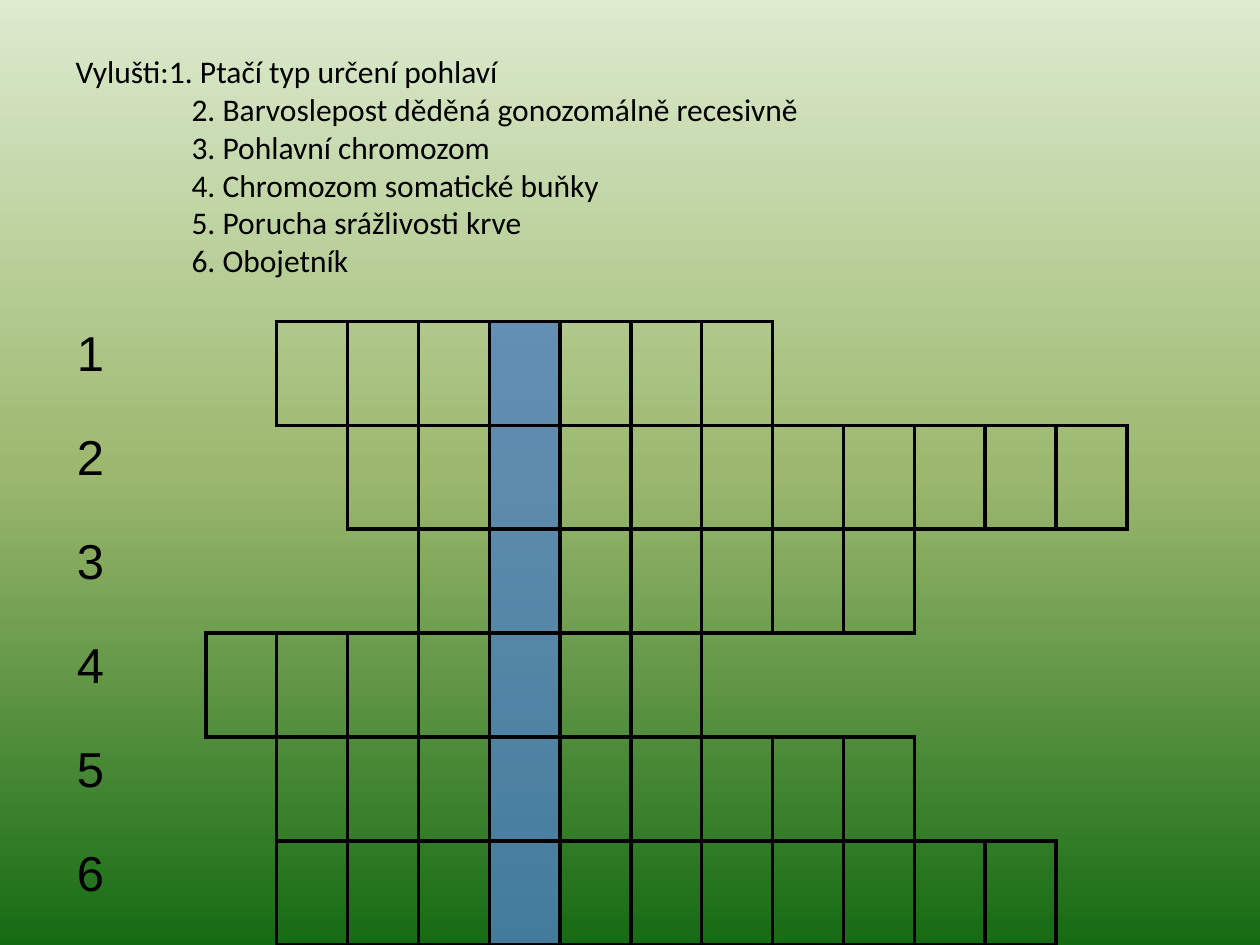
from copy import deepcopy

from lxml.etree import SubElement
from pptx import Presentation
from pptx.dml.color import RGBColor
from pptx.enum.text import MSO_ANCHOR, MSO_AUTO_SIZE, PP_ALIGN
from pptx.oxml.ns import qn
from pptx.util import Inches, Pt

BLACK = "000000"
KEY_FILL = "4F81BD"
SKY_TO_GRASS = ((0, "DDEBCF"), (0.5, "9CB86E"), (1, "156B13"))
CLUES = (
    "Vylušti:1. Ptačí typ určení pohlaví",
    "2. Barvoslepost děděná gonozomálně recesivně",
    "3. Pohlavní chromozom",
    "4. Chromozom somatické buňky",
    "5. Porucha srážlivosti krve",
    "6. Obojetník",
)
WORD_SPANS = ((3, 9), (4, 14), (5, 11), (2, 8), (3, 11), (3, 13))
COLUMNS = 16
KEY_COLUMN = 6
SIDES = (("lnL", 0, -1), ("lnR", 0, 1), ("lnT", -1, 0), ("lnB", 1, 0))


def color(hex_code):
    """Turn a hex string into a colour."""
    return RGBColor.from_string(hex_code)


def style_runs(paragraph, font_name, size):
    """Give every run of a paragraph its font, size and black colour."""
    for run in paragraph.runs:
        run.font.name = font_name
        run.font.size = Pt(size)
        run.font.color.rgb = color(BLACK)


def paint_background(slide):
    """Fill the background with a vertical three-stop gradient."""
    fill = slide.background.fill
    fill.gradient()
    fill.gradient_angle = 270
    stop_list = slide.element.find(".//" + qn("a:gsLst"))
    stop_list.append(deepcopy(stop_list[-1]))
    for stop, (position, hex_code) in zip(fill.gradient_stops, SKY_TO_GRASS):
        stop.position = position
        stop.color.rgb = color(hex_code)


def place_clues(slide, left, top, width, height):
    """Set the clues in the title with a hanging indent."""
    title = slide.shapes.title
    title.left, title.top, title.width, title.height = left, top, width, height
    frame = title.text_frame
    frame.word_wrap = True
    frame.auto_size = MSO_AUTO_SIZE.NONE
    frame.vertical_anchor = MSO_ANCHOR.MIDDLE
    paragraph = frame.paragraphs[0]
    paragraph.text = "\v".join(CLUES)
    paragraph.alignment = PP_ALIGN.LEFT
    properties = paragraph._p.get_or_add_pPr()
    properties.set("marL", str(Inches(0.92)))
    properties.set("indent", str(-Inches(0.92)))
    style_runs(paragraph, "Calibri", 18)


def in_word(row, column):
    """Tell whether a grid position holds a letter."""
    if not 0 <= row < len(WORD_SPANS):
        return False
    first, last = WORD_SPANS[row]
    return first <= column <= last


def draw_borders(cell, row, column):
    """Rule each side of a cell that touches a letter square."""
    properties = cell._tc.get_or_add_tcPr()
    for index, (tag, down, across) in enumerate(SIDES):
        line = SubElement(properties, qn("a:" + tag), w=str(Pt(2.25)))
        properties.insert(index, line)
        if in_word(row, column) or in_word(row + down, column + across):
            fill = SubElement(line, qn("a:solidFill"))
            SubElement(fill, qn("a:srgbClr"), val=BLACK)
        else:
            SubElement(line, qn("a:noFill"))


def fill_cell(cell, is_key):
    """Tint a key square and leave any other cell clear."""
    if not is_key:
        cell.fill.background()
        return
    cell.fill.solid()
    cell.fill.fore_color.rgb = color(KEY_FILL)
    tint = cell._tc.tcPr.find(".//" + qn("a:srgbClr"))
    SubElement(tint, qn("a:alpha"), val="80000")


def place_crossword(slide, left, top, width, height):
    """Build the numbered crossword as a table."""
    rows = len(WORD_SPANS)
    crossword = slide.shapes.add_table(rows, COLUMNS, left, top, width, height).table
    crossword.first_row = False
    crossword.horz_banding = False
    for row in range(rows):
        for column in range(COLUMNS):
            cell = crossword.cell(row, column)
            fill_cell(cell, column == KEY_COLUMN)
            draw_borders(cell, row, column)
        number = crossword.cell(row, 0).text_frame.paragraphs[0]
        number.text = str(row + 1)
        number.space_before = Pt(5.6)
        style_runs(number, "Arial", 28)


def main():
    """Create the slide and save it."""
    deck = Presentation()
    deck.slide_width, deck.slide_height = Inches(10), Inches(7.5)
    slide = deck.slides.add_slide(deck.slide_layouts[5])
    paint_background(slide)
    place_clues(slide, Inches(0.5), Inches(0.3), Inches(9), Inches(2.03))
    place_crossword(slide, Inches(0.51), Inches(2.55), Inches(9), Inches(4.95))
    deck.save("out.pptx")


if __name__ == "__main__":
    main()
